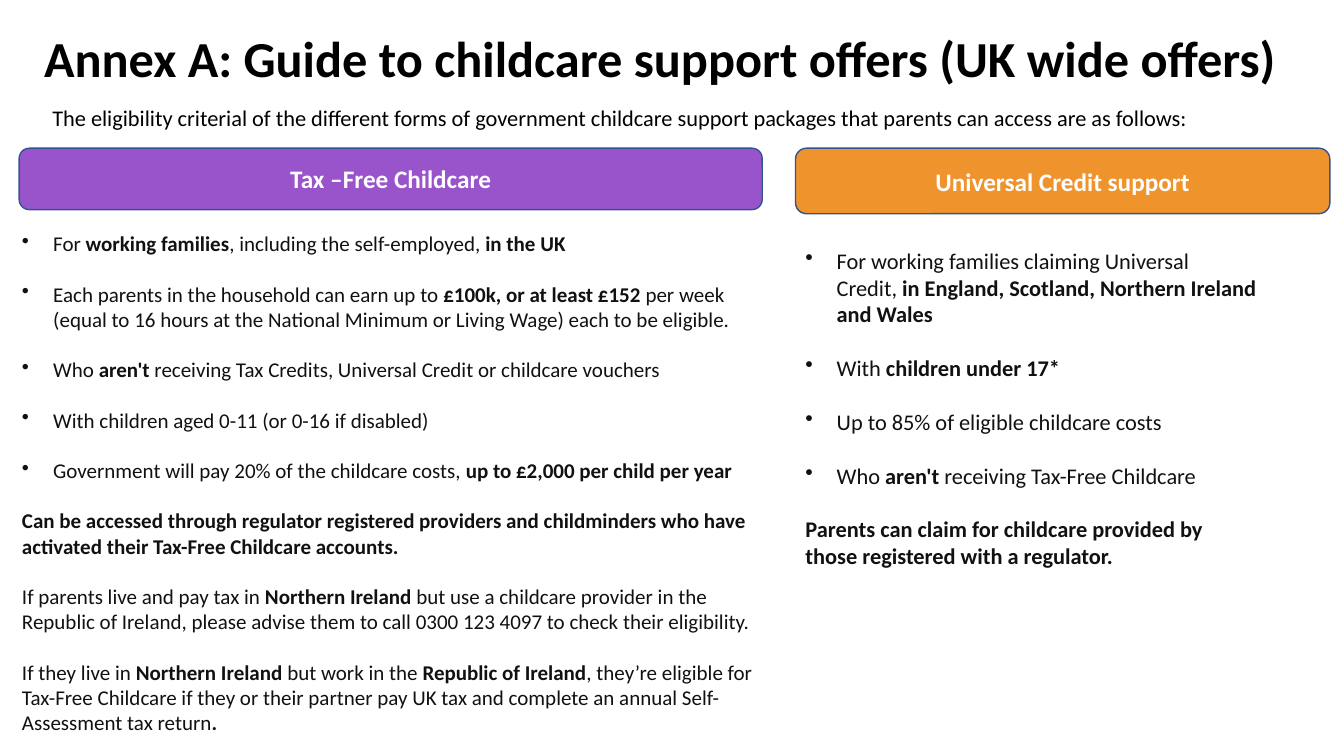
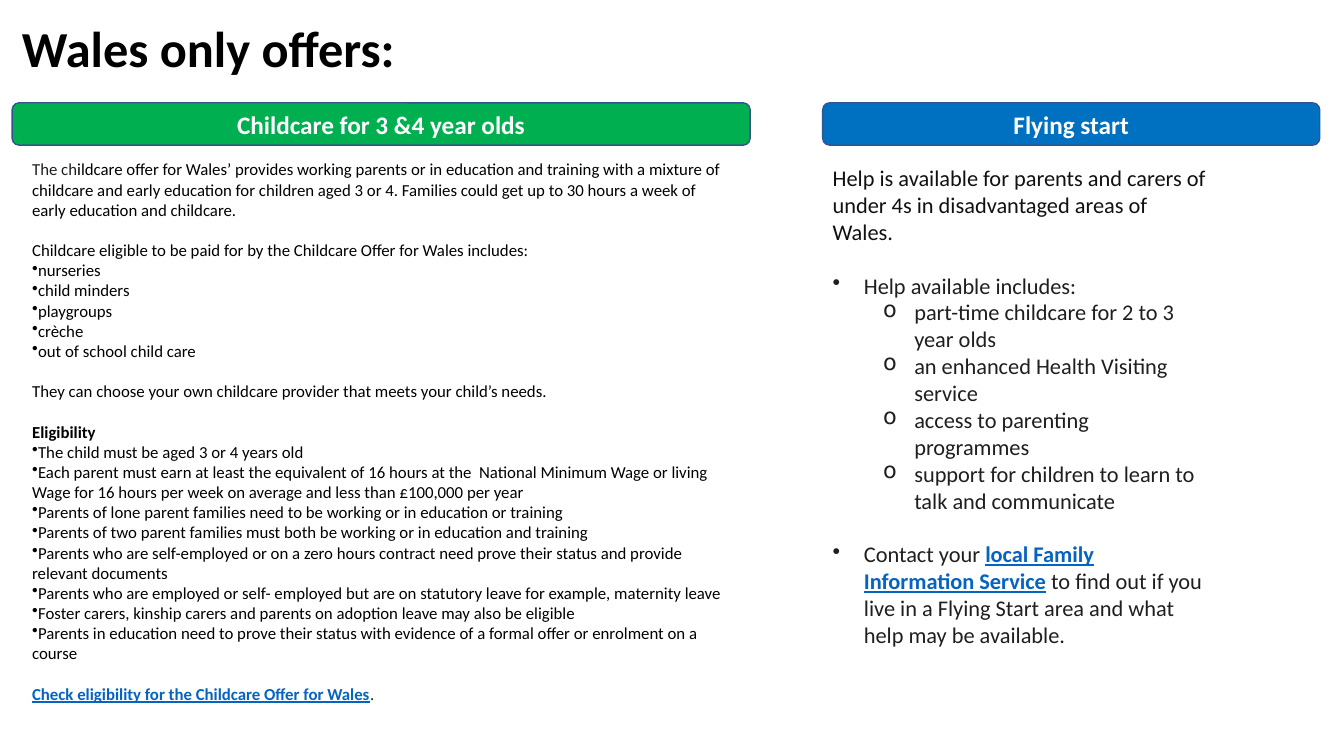
from dataclasses import dataclass

from lxml import etree
from pptx import Presentation
from pptx.dml.color import RGBColor
from pptx.enum.shapes import MSO_SHAPE
from pptx.enum.text import MSO_ANCHOR, MSO_AUTO_SIZE, PP_ALIGN
from pptx.oxml.ns import qn
from pptx.util import Pt

ROUNDED = MSO_SHAPE.ROUNDED_RECTANGLE
MIDDLE = MSO_ANCHOR.MIDDLE
TOP = MSO_ANCHOR.TOP
GROW = MSO_AUTO_SIZE.SHAPE_TO_FIT_TEXT
FIXED = MSO_AUTO_SIZE.NONE
CENTER = PP_ALIGN.CENTER

EMU_PER_PX = 9144  # 100 px to the inch
FONT = "Calibri"
LINE_FACTOR = 1.2  # height of one text line, relative to the font size
NO_BREAK_SPACE = chr(160)  # written as ~ in the texts below

COLORS = {
    "black": "000000",
    "ink": "111111",
    "charcoal": "1F1F1F",
    "white": "FFFFFF",
    "link": "0563C1",
    "outline": "325491",
    "purple": "9954CC",
    "orange": "EF932D",
    "green": "00B050",
    "blue": "0070C0",
}


@dataclass(frozen=True)
class Area:
    left: int
    top: int
    width: int
    height: int


@dataclass(frozen=True)
class Span:
    text: str
    bold: bool = False
    underline: bool = False
    color: str = ""  # empty: the colour of the text block


@dataclass(frozen=True)
class Para:
    spans: tuple[Span, ...]
    gap: bool = False  # one free line above
    bullet: str = ""
    margin: int = 0
    hanging: int = 0
    level: int = 0


@dataclass(frozen=True)
class Block:
    area: Area
    size: int
    color: str
    paras: tuple[Para, ...]


@dataclass(frozen=True)
class Header:
    area: Area
    text: str
    fill: str


@dataclass(frozen=True)
class PageContent:
    title: str
    title_area: Area
    headers: tuple[Header, ...]
    blocks: tuple[Block, ...]


# Short forms for the content
def bold(text: str) -> Span:
    return Span(text, bold=True)


def link(text: str) -> Span:
    return Span(text, bold=True, underline=True, color="link")


def plain(*parts: str | Span, gap: bool = False) -> Para:
    return Para(tuple(Span(part) if isinstance(part, str) else part for part in parts), gap)


def item(*parts: str | Span, gap: bool = False) -> Para:
    return Para(plain(*parts).spans, gap, "•", 31, 31)


def sub_item(text: str) -> Para:
    return Para((Span(text),), bullet="o", margin=81, hanging=31, level=1)


def flush_items(*texts: str) -> tuple[Para, ...]:
    return tuple(Para((Span(text),), bullet="•") for text in texts)


# Content
UK_OFFERS = PageContent(
    "Annex A: Guide to childcare support offers (UK wide offers)",
    Area(34, 0, 1276, 121),
    (
        Header(Area(19, 147, 737, 61), "Tax –Free Childcare", "purple"),
        Header(Area(789, 147, 530, 65), "Universal Credit support", "orange"),
    ),
    (
        Block(Area(42, 98, 1179, 37), 16, "black", (
            plain("The eligibility criterial of the different forms of government childcare "
                  "support packages that parents can access are as follows:"),
        )),
        Block(Area(12, 224, 744, 515), 15, "ink", (
            item("For~", bold("working~families"), ", including the self-employed,",
                 bold("~in the UK")),
            item("Each parents in the household can earn up to ",
                 bold("£100k, or~at least £152~"),
                 "per week (equal to 16 hours at the National Minimum or Living Wage) "
                 "each to be eligible.", gap=True),
            item("Who~", bold("aren't"),
                 "~receiving Tax Credits, Universal Credit or childcare vouchers", gap=True),
            item("With children aged 0-11 (or 0-16 if disabled)", gap=True),
            item("Government will pay 20% of the childcare costs,~",
                 bold("up to £2,000~per child per year"), gap=True),
            plain(bold("Can be accessed through regulator registered providers and childminders "
                       "who have activated their Tax-Free Childcare accounts."), gap=True),
            plain("If parents live and pay tax in ", bold("Northern Ireland "),
                  "but use a childcare provider in the Republic of Ireland, please advise "
                  "them to call 0300 123 4097 to check their eligibility.", gap=True),
            plain("If they live in ", bold("Northern Ireland "), "but work in the ",
                  bold("Republic of Ireland"),
                  ", they’re eligible for Tax-Free Childcare if they or their partner pay "
                  "UK tax and complete an annual Self-Assessment tax return", bold("."),
                  gap=True),
        )),
        Block(Area(789, 240, 468, 333), 16, "ink", (
            item("For working families claiming Universal Credit,",
                 bold("~in England, Scotland, Northern Ireland and Wales")),
            item("With~", bold("children under 17*"), gap=True),
            item("Up to 85% of eligible childcare costs", gap=True),
            item("Who~", bold("aren't"), "~receiving Tax-Free Childcare", gap=True),
            plain(bold("Parents can claim for childcare provided by those registered "
                       "with a regulator."), gap=True),
        )),
    ),
)

WALES_OFFERS = PageContent(
    "Wales only offers:",
    Area(12, 8, 1150, 85),
    (
        Header(Area(12, 102, 732, 42), "Childcare for 3 &4 year olds", "green"),
        Header(Area(816, 102, 493, 42), "Flying start", "blue"),
    ),
    (
        Block(Area(22, 153, 712, 555), 12, "black", (
            plain(Span("The ch", color="charcoal"),
                  "ildcare offer for Wales’ provides working parents or in education and "
                  "training with a mixture of childcare and early education for children "
                  "aged 3 or 4.~Families could get up to 30 hours~a week of early education "
                  "and childcare."),
            plain("Childcare eligible to be paid for by the Childcare Offer for Wales includes:",
                  gap=True),
            *flush_items("nurseries", "child minders", "playgroups", "crèche",
                         "out of school child care"),
            plain("They can choose your own childcare provider that meets your child’s needs.",
                  gap=True),
            plain(bold("Eligibility"), gap=True),
            *flush_items(
                "The child must be aged 3 or 4 years old",
                "Each parent must earn at least the equivalent of 16 hours at the  National "
                "Minimum Wage or living Wage for 16 hours per week on average and less than "
                "£100,000 per year",
                "Parents of lone parent families need to be working or in education or training",
                "Parents of two parent families must both be working or in education and training",
                "Parents who are self-employed or on a zero hours contract need prove their "
                "status and provide relevant documents",
                "Parents who are employed or self- employed but are on statutory leave for "
                "example, maternity leave",
                "Foster carers, kinship carers and~parents on adoption leave may also be eligible",
                "Parents in education need to prove their status with evidence of a formal "
                "offer or enrolment on a course",
            ),
            plain(link("Check eligibility for the Childcare Offer for Wales"),
                  Span(".", color="charcoal"), gap=True),
        )),
        Block(Area(816, 158, 391, 495), 16, "charcoal", (
            plain(Span("Help is available for parents and carers of under 4s in "
                       "disadvantaged areas of Wales.", color="ink")),
            item("Help available includes:", gap=True),
            sub_item("part-time childcare for 2 to 3 year olds"),
            sub_item("an enhanced Health Visiting service"),
            sub_item("access to parenting programmes"),
            sub_item("support for children to learn to talk and communicate"),
            item("Contact your~", link("local Family Information Service"),
                 "~to find out if you live in a Flying Start area and what help may be "
                 "available.", gap=True),
        )),
    ),
)


# Drawing
def px(length: int) -> int:
    return length * EMU_PER_PX


def rgb(name: str) -> RGBColor:
    return RGBColor.from_string(COLORS[name])


def place(area: Area) -> tuple[int, int, int, int]:
    return px(area.left), px(area.top), px(area.width), px(area.height)


def add_span(para, span: Span, size: int, color: str) -> None:
    run = para.add_run()
    run.text = span.text.replace("~", NO_BREAK_SPACE)
    font = run.font
    font.name, font.size, font.bold = FONT, Pt(size), span.bold
    font.underline = span.underline
    font.color.rgb = rgb(span.color or color)


def set_bullet(para, content: Para) -> None:
    properties = para._p.get_or_add_pPr()
    properties.set("marL", str(px(content.margin)))
    properties.set("indent", str(px(-content.hanging)))
    etree.SubElement(properties, qn("a:buChar")).set("char", content.bullet)


def add_text_box(page, area: Area, anchor, auto_size):
    frame = page.shapes.add_textbox(*place(area)).text_frame
    frame.word_wrap = True
    frame.auto_size = auto_size
    frame.vertical_anchor = anchor
    return frame


def add_title(page, text: str, area: Area) -> None:
    para = add_text_box(page, area, MIDDLE, FIXED).paragraphs[0]
    para.line_spacing = 0.9
    add_span(para, bold(text), 36, "black")


def add_header(page, header: Header) -> None:
    box = page.shapes.add_shape(ROUNDED, *place(header.area))
    box.shadow.inherit = False
    box.fill.solid()
    box.fill.fore_color.rgb = rgb(header.fill)
    box.line.color.rgb = rgb("outline")
    box.line.width = Pt(1)
    box.text_frame.vertical_anchor = MIDDLE
    para = box.text_frame.paragraphs[0]
    para.alignment = CENTER
    add_span(para, bold(header.text), 18, "white")


def add_block(page, block: Block) -> None:
    frame = add_text_box(page, block.area, TOP, GROW)
    for index, content in enumerate(block.paras):
        para = frame.add_paragraph() if index else frame.paragraphs[0]
        para.level = content.level
        if content.gap:
            para.space_before = Pt(block.size * LINE_FACTOR)
        if content.bullet:
            set_bullet(para, content)
        for span in content.spans:
            add_span(para, span, block.size, block.color)


def add_page(deck, content: PageContent) -> None:
    page = deck.slides.add_slide(deck.slide_layouts[6])
    add_title(page, content.title, content.title_area)
    for header in content.headers:
        add_header(page, header)
    for block in content.blocks:
        add_block(page, block)


def main() -> None:
    deck = Presentation()
    deck.slide_width, deck.slide_height = px(1333), px(750)
    for content in (UK_OFFERS, WALES_OFFERS):
        add_page(deck, content)
    deck.save("out.pptx")


if __name__ == "__main__":
    main()
